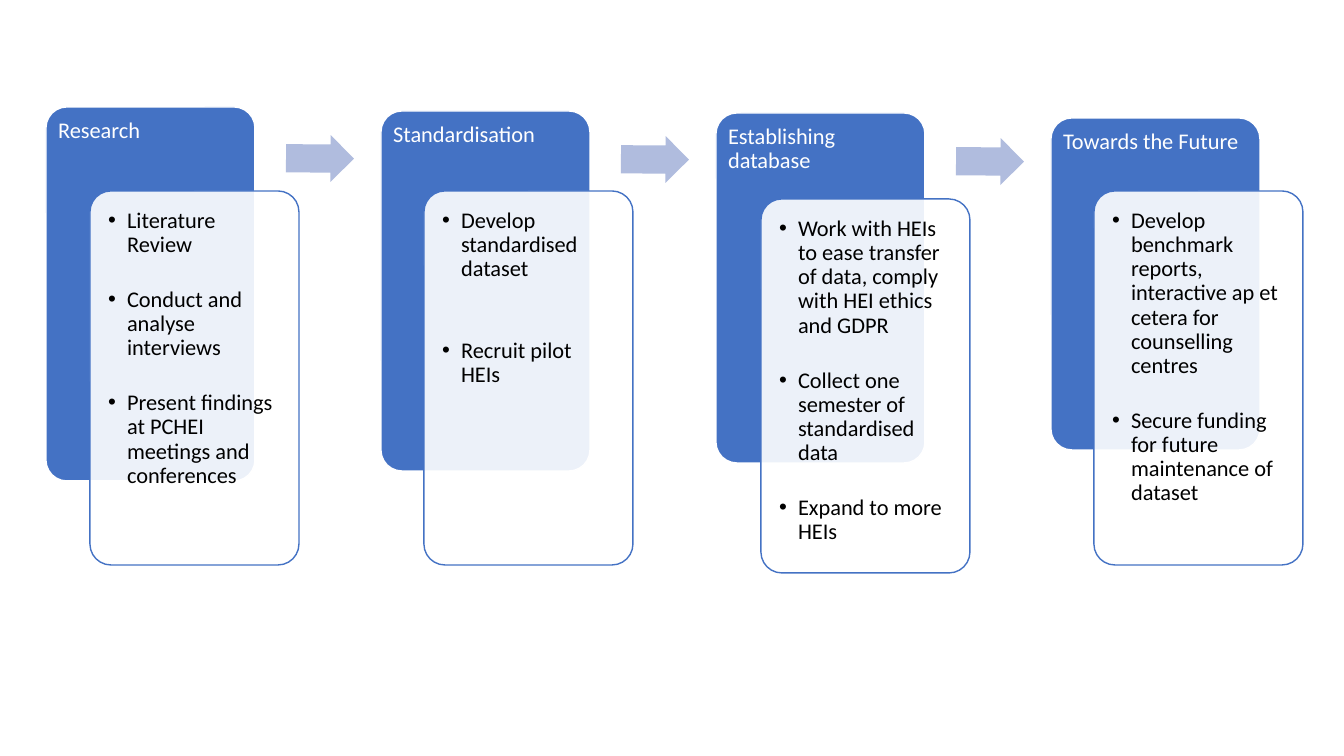
from lxml import etree
from pptx import Presentation
from pptx.dml.color import RGBColor
from pptx.enum.shapes import MSO_SHAPE
from pptx.enum.text import MSO_ANCHOR, PP_ALIGN
from pptx.oxml.ns import qn
from pptx.util import Pt

ROUNDED = MSO_SHAPE.ROUNDED_RECTANGLE
ARROW = MSO_SHAPE.RIGHT_ARROW
TOP = MSO_ANCHOR.TOP
LEFT = PP_ALIGN.LEFT

COLORS = {"blue": "4472C4", "arrow": "B0BCDE", "white": "FFFFFF", "black": "000000"}
FONT, FONT_SIZE = "Calibri", 16

# Panel top and height, card left and top in px; gap between tasks in points
STAGES = [
    {"title": "Research", "panel": (107, 374), "card": (90, 191), "gap": 22,
     "tasks": ["Literature Review", "Conduct and analyse interviews",
               "Present findings at PCHEI meetings and conferences"]},
    {"title": "Standardisation", "panel": (111, 360), "card": (424, 191), "gap": 41,
     "tasks": ["Develop standardised dataset", "Recruit pilot HEIs"]},
    {"title": "Establishing database", "panel": (113, 350), "card": (761, 199), "gap": 22,
     "tasks": ["Work with HEIs to ease transfer of data, comply with HEI ethics and GDPR",
               "Collect one semester of standardised data", "Expand to more HEIs"]},
    {"title": "Towards the Future", "panel": (118, 332), "card": (1094, 191), "gap": 22,
     "tasks": ["Develop benchmark reports, interactive ap et cetera for counselling centres",
               "Secure funding for future maintenance of dataset"]},
]
ARROWS = [(135, 0.3), (136, 0.2), (138, 0.4)]  # top in px, rotation in degrees

SLIDE_W, SLIDE_H = 1344, 756
FIRST_LEFT, STAGE_PITCH = 46, 335
BOX_W, CARD_H = 209, 374
ARROW_OFFSET, ARROW_W, ARROW_H = 240, 68, 47
PANEL_INSET, CARD_INSET, BULLET_INDENT = 6, 12, 19


def px(length):
    return round(length * 914400 / 100.8)


def rgb(name):
    return RGBColor.from_string(COLORS[name])


def add_block(slide, kind, box, fill, line=None):
    block = slide.shapes.add_shape(kind, *map(px, box))
    block.shadow.inherit = False
    block.fill.solid()
    block.fill.fore_color.rgb = rgb(fill)
    if line:
        block.line.color.rgb = rgb(line)
        block.line.width = Pt(1)
        block.adjustments[0] = 0.1
    else:
        block.line.fill.background()
    return block


def write(block, lines, color, inset, gap=0):
    """Set top-left text, one paragraph a line, with a gap in points between them."""
    frame = block.text_frame
    frame.word_wrap = True
    frame.vertical_anchor = TOP
    frame.margin_left = frame.margin_right = px(inset)
    frame.margin_top = frame.margin_bottom = px(inset)
    frame.text = "\n".join(lines)
    for index, paragraph in enumerate(frame.paragraphs):
        paragraph.alignment = LEFT
        paragraph.line_spacing = 0.9
        paragraph.space_before = Pt(gap if index else 0)
        font = paragraph.runs[0].font
        font.name, font.size = FONT, Pt(FONT_SIZE)
        font.color.rgb = rgb(color)


def add_bullets(block):
    for paragraph in block.text_frame.paragraphs:
        properties = paragraph._p.get_or_add_pPr()
        properties.set("marL", str(px(BULLET_INDENT)))
        properties.set("indent", str(-px(BULLET_INDENT)))
        etree.SubElement(properties, qn("a:buFont"), typeface="Arial")
        etree.SubElement(properties, qn("a:buChar"), char="•")


def set_opacity(block, percent):
    color = block.fill._xPr.find(qn("a:solidFill"))[0]
    etree.SubElement(color, qn("a:alpha"), val=str(percent * 1000))


def add_stage(slide, left, stage):
    panel_top, panel_height = stage["panel"]
    panel = add_block(slide, ROUNDED, (left, panel_top, BOX_W, panel_height), "blue", "white")
    write(panel, [stage["title"]], "white", PANEL_INSET)

    card = add_block(slide, ROUNDED, (*stage["card"], BOX_W, CARD_H), "white", "blue")
    set_opacity(card, 90)
    write(card, stage["tasks"], "black", CARD_INSET, stage["gap"])
    add_bullets(card)


def main():
    deck = Presentation()
    deck.slide_width, deck.slide_height = px(SLIDE_W), px(SLIDE_H)
    slide = deck.slides.add_slide(deck.slide_layouts[6])

    lefts = [FIRST_LEFT + STAGE_PITCH * index for index in range(len(STAGES))]
    for left, stage in zip(lefts, STAGES):
        add_stage(slide, left, stage)
    for left, (top, rotation) in zip(lefts, ARROWS):
        arrow = add_block(slide, ARROW, (left + ARROW_OFFSET, top, ARROW_W, ARROW_H), "arrow")
        arrow.adjustments[0] = 0.6
        arrow.rotation = rotation

    deck.save("out.pptx")


if __name__ == "__main__":
    main()
